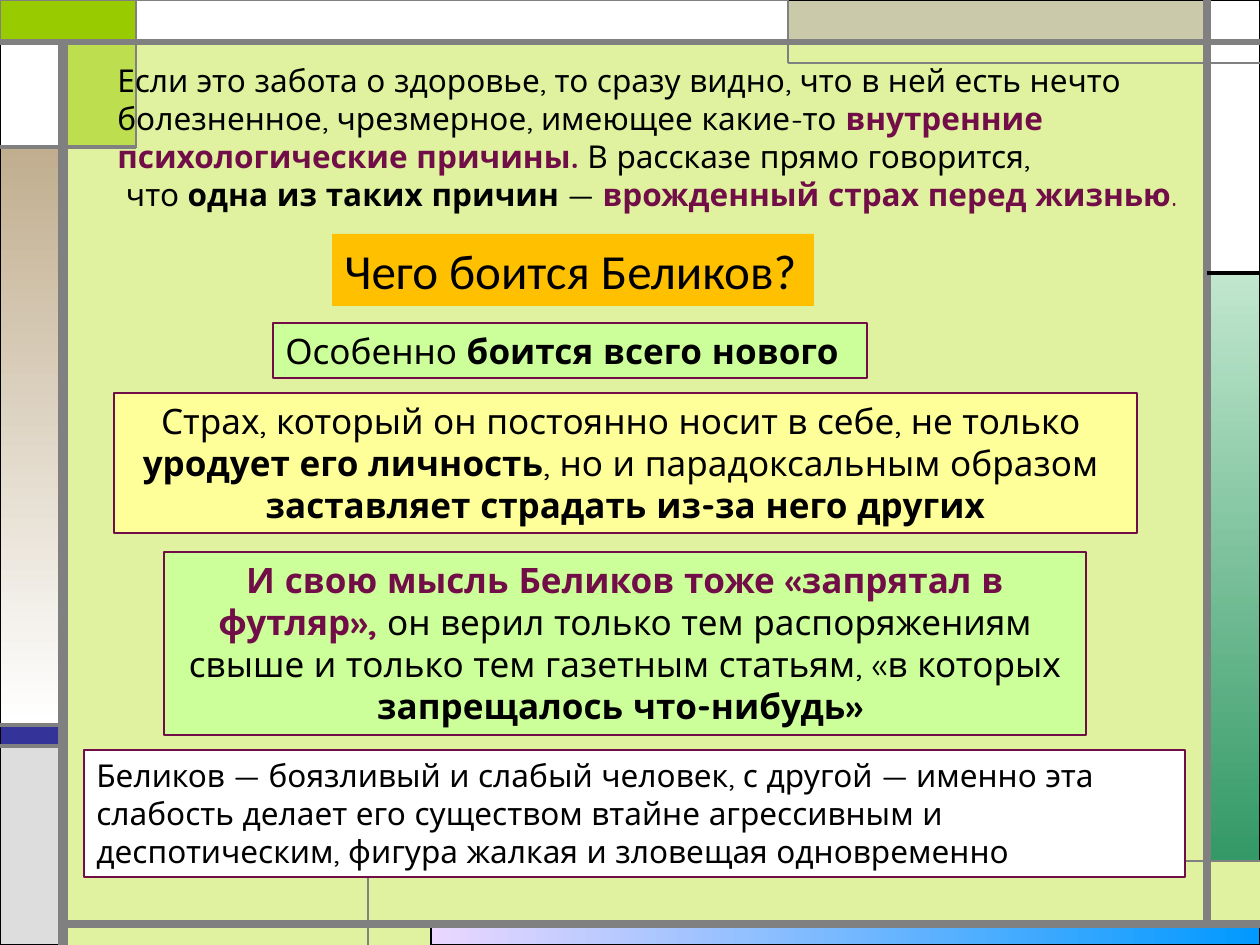
from lxml import etree
from pptx import Presentation
from pptx.dml.color import RGBColor
from pptx.enum.shapes import MSO_CONNECTOR, MSO_SHAPE
from pptx.enum.text import MSO_ANCHOR, MSO_AUTO_SIZE, PP_ALIGN
from pptx.oxml.ns import qn
from pptx.util import Pt

RECTANGLE = MSO_SHAPE.RECTANGLE
STRAIGHT = MSO_CONNECTOR.STRAIGHT
TOP = MSO_ANCHOR.TOP
FIT_SHAPE = MSO_AUTO_SIZE.SHAPE_TO_FIT_TEXT
LEFT = PP_ALIGN.LEFT
CENTER = PP_ALIGN.CENTER

PX = 914400 / 126
WIDTH, HEIGHT = 1260, 945

BLACK = RGBColor(0x00, 0x00, 0x00)
WHITE = RGBColor(0xFF, 0xFF, 0xFF)
GRAY = RGBColor(0x80, 0x80, 0x80)
SILVER = RGBColor(0xDD, 0xDD, 0xDD)
LIME = RGBColor(0x99, 0xCC, 0x00)
PALE_LIME = RGBColor(0xE0, 0xF2, 0xA0)
INDIGO = RGBColor(0x33, 0x33, 0x99)
KHAKI = RGBColor(0xCA, 0xC9, 0xAA)
TAN = RGBColor(0xC1, 0xAE, 0x8F)
LILAC = RGBColor(0xEB, 0xD7, 0xFF)
SKY = RGBColor(0x00, 0x99, 0xFF)
MINT = RGBColor(0xC1, 0xE7, 0xCE)
GREEN = RGBColor(0x33, 0x99, 0x66)
AMBER = RGBColor(0xFF, 0xC0, 0x00)
LIGHT_GREEN = RGBColor(0xCC, 0xFF, 0x99)
LIGHT_YELLOW = RGBColor(0xFF, 0xFF, 0x99)
PLUM = RGBColor(0x72, 0x0E, 0x47)

BODY_FONT = "Quicksand"
TITLE_FONT = "Calibri"


def emu(*lengths):
    return [round(length * PX) for length in lengths]


def add_block(slide, box, fill=None, line=None, line_width=0.75):
    shape = slide.shapes.add_shape(RECTANGLE, *emu(*box))
    shape.shadow.inherit = False
    if fill is None:
        shape.fill.background()
    else:
        shape.fill.solid()
        shape.fill.fore_color.rgb = fill
    if line is None:
        shape.line.fill.background()
    else:
        shape.line.color.rgb = line
        shape.line.width = Pt(line_width)
    return shape


def set_gradient(shape, start, end, angle):
    shape.fill.gradient()
    shape.fill.gradient_angle = angle
    for stop, color in zip(shape.fill.gradient_stops, (start, end)):
        stop.color.rgb = color
    for stop, position in zip(shape.fill.gradient_stops, (0, 1)):
        stop.position = position


def set_opacity(shape, percent):
    color = shape.fill._xPr.find(qn("a:solidFill"))[0]
    etree.SubElement(color, qn("a:alpha"), val=str(percent * 1000))


def add_rule(slide, start, end, width, color=GRAY):
    connector = slide.shapes.add_connector(STRAIGHT, *emu(*start, *end))
    connector.line.color.rgb = color
    connector.line.width = Pt(width)
    etree.SubElement(connector._element.spPr, qn("a:effectLst"))


def add_frame(slide, left, top, width, height):
    right, bottom = left + width, top + height
    rail_left, rail_right = left + 63, right - 53
    rail_top, rail_bottom = top + 42, bottom - 21
    tab_right, tab_bottom = left + 136, top + 147
    khaki_left, khaki_bottom = left + 788, top + 63
    mint_top, mint_bottom = top + 273, top + 861
    indigo_top, indigo_bottom = top + 725, top + 746
    foot_left, sky_left = left + 368, left + 431

    def block(x1, y1, x2, y2, fill, line=BLACK, line_width=0.75):
        return add_block(slide, (x1, y1, x2 - x1, y2 - y1), fill, line, line_width)

    sky = block(sky_left, rail_bottom, right, bottom, SKY)
    set_gradient(sky, LILAC, SKY, 0)
    mint = block(rail_right, mint_top, right, mint_bottom, GREEN)
    set_gradient(mint, MINT, GREEN, 270)
    block(left, indigo_top, rail_left, indigo_bottom, INDIGO)
    block(left, indigo_bottom, rail_left, bottom, SILVER)
    block(rail_right, top, right, mint_top, WHITE)
    block(khaki_left, top, rail_right, rail_top, KHAKI)
    tab = block(rail_left, rail_top, tab_right, tab_bottom, LIME)
    set_opacity(tab, 50)
    tan = block(left, tab_bottom, rail_left, indigo_top, TAN)
    set_gradient(tan, TAN, WHITE, 270)
    block(left, rail_top, rail_left, tab_bottom, WHITE)
    block(left, top, tab_right, rail_top, LIME, GRAY, 1.5)
    block(tab_right, top, khaki_left, rail_top, WHITE, GRAY)

    add_rule(slide, (rail_left, bottom), (rail_left, rail_top), 6)
    add_rule(slide, (rail_left, rail_bottom), (right, rail_bottom), 4.5)
    add_rule(slide, (rail_right, rail_bottom), (rail_right, top), 4.5)
    add_rule(slide, (left, rail_top), (right, rail_top), 3)
    add_rule(slide, (right, khaki_bottom), (khaki_left, khaki_bottom), 1.5)
    add_rule(slide, (khaki_left, khaki_bottom), (khaki_left, top), 1.5)
    add_rule(slide, (rail_right, mint_top), (right, mint_top), 2.25, BLACK)
    add_rule(slide, (tab_right, top), (tab_right, tab_bottom), 1.5)
    add_rule(slide, (tab_right, tab_bottom), (left, tab_bottom), 2.25)
    add_rule(slide, (foot_left, bottom), (foot_left, mint_bottom), 1.5)
    add_rule(slide, (foot_left, mint_bottom), (right, mint_bottom), 1.5)
    for y in (indigo_top, indigo_bottom):
        add_rule(slide, (rail_left, y), (left, y), 2.25)


def add_panel(slide, box, paragraphs, size, fill=None, line=None,
              font=BODY_FONT, align=LEFT, wrap=True):
    shape = add_block(slide, box, fill, line)
    frame = shape.text_frame
    frame.word_wrap = wrap
    frame.auto_size = FIT_SHAPE
    frame.vertical_anchor = TOP
    for index, runs in enumerate(paragraphs):
        paragraph = frame.add_paragraph() if index else frame.paragraphs[0]
        paragraph.alignment = align
        for text, color, bold in runs:
            run = paragraph.add_run()
            run.text = text
            run.font.name = font
            run.font.size = Pt(size)
            run.font.color.rgb = color
            run.font.bold = bold


def add_content(slide, left, top):
    def panel(x, y, width, height, *arguments, **options):
        add_panel(slide, (left + x, top + y, width, height), *arguments, **options)

    panel(105, 55, 1121, 204, [
        [("Если это забота о здоровье, то сразу видно, что в ней есть нечто "
          "болезненное, чрезмерное, имеющее какие-то ", BLACK, False),
         ("внутренние психологические причины.", PLUM, True),
         (" В рассказе прямо говорится,", BLACK, False)],
        [(" что ", BLACK, False),
         ("одна из таких причин", BLACK, True),
         (" — ", BLACK, False),
         ("врожденный страх перед жизнью", PLUM, True),
         (".", PLUM, False)],
    ], 18)
    panel(332, 234, 482, 72, [[("Чего боится Беликов?", BLACK, False)]],
          28, AMBER, font=TITLE_FONT, wrap=False)
    panel(273, 323, 594, 55, [
        [("Особенно ", BLACK, False), ("боится всего нового", BLACK, True)],
    ], 20, LIGHT_GREEN, PLUM, wrap=False)
    panel(114, 393, 1023, 140, [
        [("Страх, который он постоянно носит в себе, не только ", BLACK, False)],
        [("уродует его личность", BLACK, True),
         (", но и парадоксальным образом ", BLACK, False)],
        [("заставляет страдать из-за него других", BLACK, True)],
    ], 20, LIGHT_YELLOW, PLUM, align=CENTER, wrap=False)
    panel(164, 552, 922, 183, [
        [("И свою мысль Беликов тоже «запрятал в футляр»,", PLUM, True),
         (" он верил только тем распоряжениям свыше и только тем газетным "
          "статьям, «в которых ", BLACK, False),
         ("запрещалось что-нибудь» ", BLACK, True)],
    ], 20, LIGHT_GREEN, PLUM, align=CENTER)
    panel(84, 750, 1101, 127, [
        [("Беликов — боязливый и слабый человек, с другой — именно эта "
          "слабость делает его существом втайне агрессивным и деспотическим, "
          "фигура жалкая и зловещая одновременно", BLACK, False)],
    ], 18, WHITE, PLUM)


def main():
    presentation = Presentation()
    presentation.slide_width, presentation.slide_height = emu(WIDTH, HEIGHT)
    slide = presentation.slides.add_slide(presentation.slide_layouts[6])
    slide.background.fill.solid()
    slide.background.fill.fore_color.rgb = PALE_LIME
    add_frame(slide, 0, 0, WIDTH, HEIGHT)
    add_content(slide, 0, 0)
    presentation.save("out.pptx")


if __name__ == "__main__":
    main()
